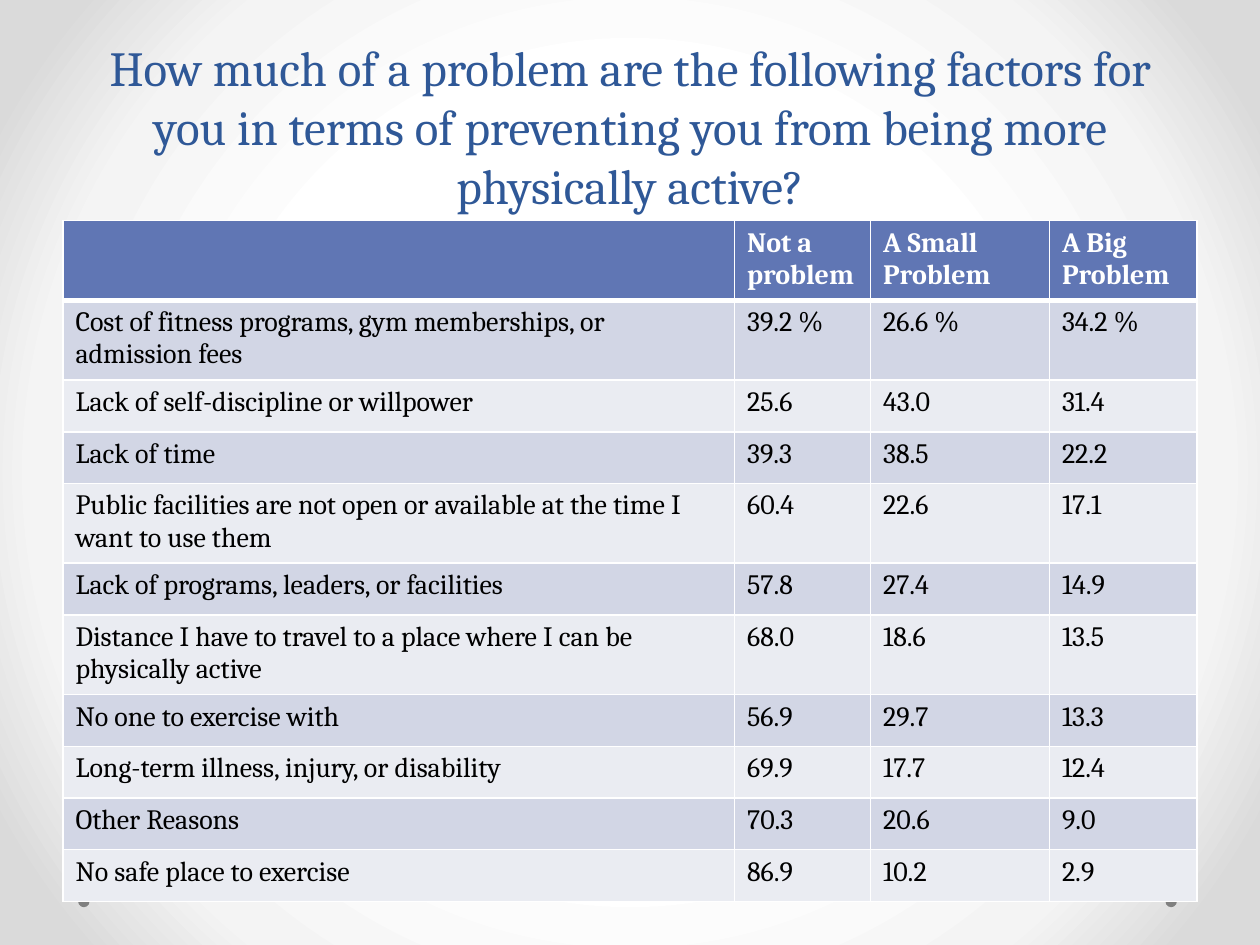
from pptx import Presentation
from pptx.dml.color import RGBColor
from pptx.enum.shapes import MSO_SHAPE
from pptx.enum.text import MSO_ANCHOR, PP_ALIGN
from pptx.oxml import parse_xml
from pptx.oxml.ns import nsdecls, qn
from pptx.util import Inches, Pt

TITLE_BLUE = RGBColor(0x2F, 0x58, 0x97)
HEADER_BLUE = RGBColor(0x60, 0x76, 0xB4)
DARK_BAND = RGBColor(0xD2, 0xD6, 0xE5)
LIGHT_BAND = RGBColor(0xEA, 0xEC, 0xF2)
WHITE = RGBColor(0xFF, 0xFF, 0xFF)
BLACK = RGBColor(0x00, 0x00, 0x00)
GRAY = RGBColor(0x80, 0x80, 0x80)
BACKGROUND_STOPS = [
    (50, WHITE),
    (76, RGBColor(0xF4, 0xF4, 0xF4)),
    (92, RGBColor(0xDA, 0xDA, 0xDA)),
]

TITLE = (
    "How much of a problem are the following factors for you "
    "in terms of preventing you from being more physically active?"
)
ROWS = [
    ("", "Not a problem", "A Small Problem", "A Big Problem"),
    ("Cost of fitness programs, gym memberships, or admission fees", "39.2 %", "26.6 %", "34.2 %"),
    ("Lack of self-discipline or willpower", "25.6", "43.0", "31.4"),
    ("Lack of time", "39.3", "38.5", "22.2"),
    ("Public facilities are not open or available at the time I want to use them", "60.4", "22.6", "17.1"),
    ("Lack of programs, leaders, or facilities", "57.8", "27.4", "14.9"),
    ("Distance I have to travel to a place where I can be physically active", "68.0", "18.6", "13.5"),
    ("No one to exercise with", "56.9", "29.7", "13.3"),
    ("Long-term illness, injury, or disability", "69.9", "17.7", "12.4"),
    ("Other Reasons", "70.3", "20.6", "9.0"),
    ("No safe place to exercise", "86.9", "10.2", "2.9"),
]
COLUMN_WIDTHS = [5.33, 1.08, 1.42, 1.17]
ROW_HEIGHT = 0.41


def write_text(frame, text, size=16, color=BLACK, bold=False, align=PP_ALIGN.LEFT):
    para = frame.paragraphs[0]
    para.alignment = align
    para.font.size = Pt(size)
    if text:
        span = para.add_run()
        span.text = text
        span.font.name = "Cambria"
        span.font.size = Pt(size)
        span.font.bold = bold
        span.font.color.rgb = color


def add_border(cell, side, width):
    cell._tc.get_or_add_tcPr().append(parse_xml(
        f'<a:ln{side} {nsdecls("a")} w="{Pt(width)}"><a:solidFill>'
        f'<a:srgbClr val="{WHITE}"/></a:solidFill></a:ln{side}>'
    ))


deck = Presentation()
deck.slide_width = Inches(10)
deck.slide_height = Inches(7.5)
page = deck.slides.add_slide(deck.slide_layouts[6])

page.background.fill.gradient()
gradient = next(page.element.iter(qn("a:gradFill")))
stops = "".join(
    f'<a:gs pos="{position * 1000}"><a:srgbClr val="{color}"/></a:gs>'
    for position, color in BACKGROUND_STOPS
)
gradient.getparent().replace(gradient, parse_xml(
    f'<a:gradFill {nsdecls("a")} rotWithShape="1"><a:gsLst>{stops}</a:gsLst>'
    '<a:path path="circle"><a:fillToRect l="50000" t="50000" r="50000" b="50000"/></a:path>'
    '</a:gradFill>'
))

for left in (9.25, 0.62):
    dot = page.shapes.add_shape(
        MSO_SHAPE.OVAL, Inches(left), Inches(7.11), Inches(0.09), Inches(0.09)
    )
    dot.shadow.inherit = False
    dot.fill.solid()
    dot.fill.fore_color.rgb = GRAY
    dot.line.fill.background()

title_box = page.shapes.add_textbox(Inches(0.5), Inches(0), Inches(9), Inches(1.75))
title_box.text_frame.word_wrap = True
title_box.text_frame.vertical_anchor = MSO_ANCHOR.BOTTOM
write_text(title_box.text_frame, TITLE, size=28, color=TITLE_BLUE, align=PP_ALIGN.CENTER)

table = page.shapes.add_table(
    len(ROWS), len(COLUMN_WIDTHS),
    Inches(0.5), Inches(1.75), Inches(9), Inches(ROW_HEIGHT * len(ROWS)),
).table
for column, width in zip(table.columns, COLUMN_WIDTHS):
    column.width = Inches(width)

for row_index, values in enumerate(ROWS):
    table.rows[row_index].height = Inches(ROW_HEIGHT)
    is_header = row_index == 0
    band = HEADER_BLUE if is_header else DARK_BAND if row_index % 2 else LIGHT_BAND
    borders = {"L": 1, "R": 1, "T": 3 if row_index == 1 else 1, "B": 3 if is_header else 1}
    for column_index, text in enumerate(values):
        cell = table.cell(row_index, column_index)
        for side, width in borders.items():
            add_border(cell, side, width)
        cell.fill.solid()
        cell.fill.fore_color.rgb = band
        write_text(cell.text_frame, text, color=WHITE if is_header else BLACK, bold=is_header)

deck.save("out.pptx")
